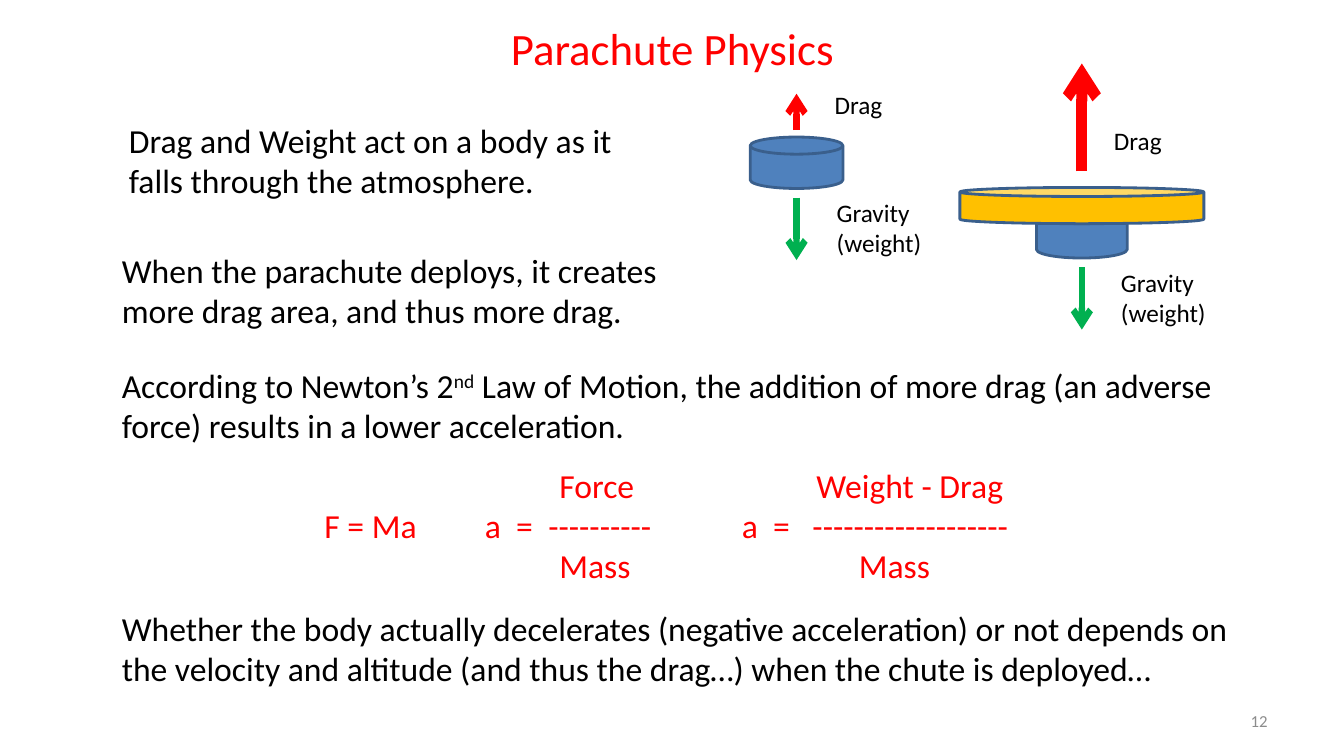
from lxml.etree import SubElement
from pptx import Presentation
from pptx.dml.color import RGBColor
from pptx.enum.shapes import MSO_CONNECTOR, MSO_SHAPE
from pptx.enum.text import MSO_ANCHOR, PP_ALIGN
from pptx.oxml.ns import qn
from pptx.util import Inches, Pt

COLORS = {
    "text": "000000",
    "drag": "FF0000",
    "weight": "00B050",
    "body": "4F81BD",
    "outline": "3A5F8C",
    "chute": "FFC000",
    "number": "8C8C8C",
}


class SlideBuilder:
    """Draws styled elements on the current slide."""

    def __init__(self, slide, font="Calibri"):
        self.slide = slide
        self.font = font

    def color(self, name):
        return RGBColor.from_string(COLORS[name])

    def add_run(self, paragraph, text, size, color, baseline=None):
        run = paragraph.add_run()
        run.text = text
        run.font.name = self.font
        run.font.size = Pt(size)
        run.font.color.rgb = self.color(color)
        if baseline:
            run.font._element.set("baseline", str(baseline))

    def add_text(self, box, runs, size=24, color="text",
                 align=PP_ALIGN.LEFT, anchor=MSO_ANCHOR.TOP):
        shape = self.slide.shapes.add_textbox(*map(Inches, box))
        frame = shape.text_frame
        frame.word_wrap = True
        frame.vertical_anchor = anchor
        paragraph = frame.paragraphs[0]
        paragraph.alignment = align
        for text, *baseline in runs:
            self.add_run(paragraph, text, size, color, *baseline)

    def add_tabbed_text(self, box, rows, size, color):
        shape = self.slide.shapes.add_textbox(*map(Inches, box))
        frame = shape.text_frame
        frame.word_wrap = True
        for index, (text, stops) in enumerate(rows):
            paragraph = frame.add_paragraph() if index else frame.paragraphs[0]
            tab_list = SubElement(paragraph._p.get_or_add_pPr(), qn("a:tabLst"))
            for stop in stops:
                SubElement(tab_list, qn("a:tab"), pos=str(Inches(stop)), algn="l")
            self.add_run(paragraph, text, size, color)

    def add_solid(self, kind, box, fill):
        shape = self.slide.shapes.add_shape(kind, *map(Inches, box))
        shape.shadow.inherit = False
        shape.fill.solid()
        shape.fill.fore_color.rgb = self.color(fill)
        shape.line.color.rgb = self.color("outline")
        shape.line.width = Pt(2)

    def add_force_arrow(self, x, start, end, color, width=4.5):
        connector = self.slide.shapes.add_connector(
            MSO_CONNECTOR.STRAIGHT, Inches(x), Inches(start), Inches(x), Inches(end))
        connector.line.color.rgb = self.color(color)
        connector.line.width = Pt(width)
        SubElement(connector.line._get_or_add_ln(), qn("a:tailEnd"), type="arrow")
        SubElement(connector._element.spPr, qn("a:effectLst"))

    def add_falling_body(self, box, drag, drag_label, weight_label):
        left, top, width, height = box
        center = left + width / 2
        start, end, line_width = drag
        self.add_solid(MSO_SHAPE.FLOWCHART_MAGNETIC_DISK, box, "body")
        self.add_force_arrow(center, top + height + 0.09, top + height + 0.71, "weight")
        self.add_force_arrow(center, start, end, "drag", line_width)
        self.add_text((*drag_label, 1.23, 0.4), [("Drag",)], 18)
        self.add_text((*weight_label, 1.23, 0.71), [("Gravity (weight)",)], 18)


def main():
    presentation = Presentation()
    presentation.slide_width = Inches(13.33)
    presentation.slide_height = Inches(7.5)
    builder = SlideBuilder(presentation.slides.add_slide(presentation.slide_layouts[6]))

    builder.add_text((2.17, 0.09, 9, 0.77), [("Parachute Physics",)], 32, "drag",
                     PP_ALIGN.CENTER, MSO_ANCHOR.MIDDLE)

    statements = [
        ((1.18, 1.14, 5.08, 1.04),
         [("Drag and Weight act on a body as it falls through the atmosphere.",)]),
        ((1.11, 2.43, 6.18, 0.89),
         [("When the parachute deploys, it creates more drag area, "
           "and thus more drag.",)]),
        ((1.11, 3.57, 11.34, 0.89),
         [("According to Newton’s 2",), ("nd", 30000),
          (" Law of Motion, the addition of more drag (an adverse force) "
           "results in a lower acceleration.",)]),
        ((1.11, 5.98, 11.34, 1),
         [("Whether the body actually decelerates (negative acceleration) or not "
           "depends on the velocity and altitude (and thus the drag…) "
           "when the chute is deployed…",)]),
    ]
    for box, runs in statements:
        builder.add_text(box, runs)

    equation_rows = [
        ("\tForce\tWeight - Drag", (2.33, 4.88)),
        ("F = Ma\ta\t=\t" + "-" * 10 + "\ta\t=\t" + "-" * 19,
         (1.59, 1.9, 2.22, 4.14, 4.45, 4.84)),
        ("\tMass\tMass", (2.33, 5.3)),
    ]
    builder.add_tabbed_text((3.12, 4.56, 7.5, 1.31), equation_rows, 24, "drag")

    builder.add_falling_body((7.44, 1.36, 0.92, 0.51), (1.29, 0.93, 4.5),
                             (8.18, 0.84), (8.2, 1.91))
    builder.add_falling_body((10.28, 2.05, 0.9, 0.51), (1.7, 0.63, 7.75),
                             (10.95, 1.19), (11.02, 2.6))
    builder.add_solid(MSO_SHAPE.CAN, (9.52, 1.86, 2.42, 0.36), "chute")

    builder.add_text((9.56, 6.95, 3.11, 0.4), [("12",)], 12, "number",
                     PP_ALIGN.RIGHT, MSO_ANCHOR.MIDDLE)
    presentation.save("out.pptx")


if __name__ == "__main__":
    main()
